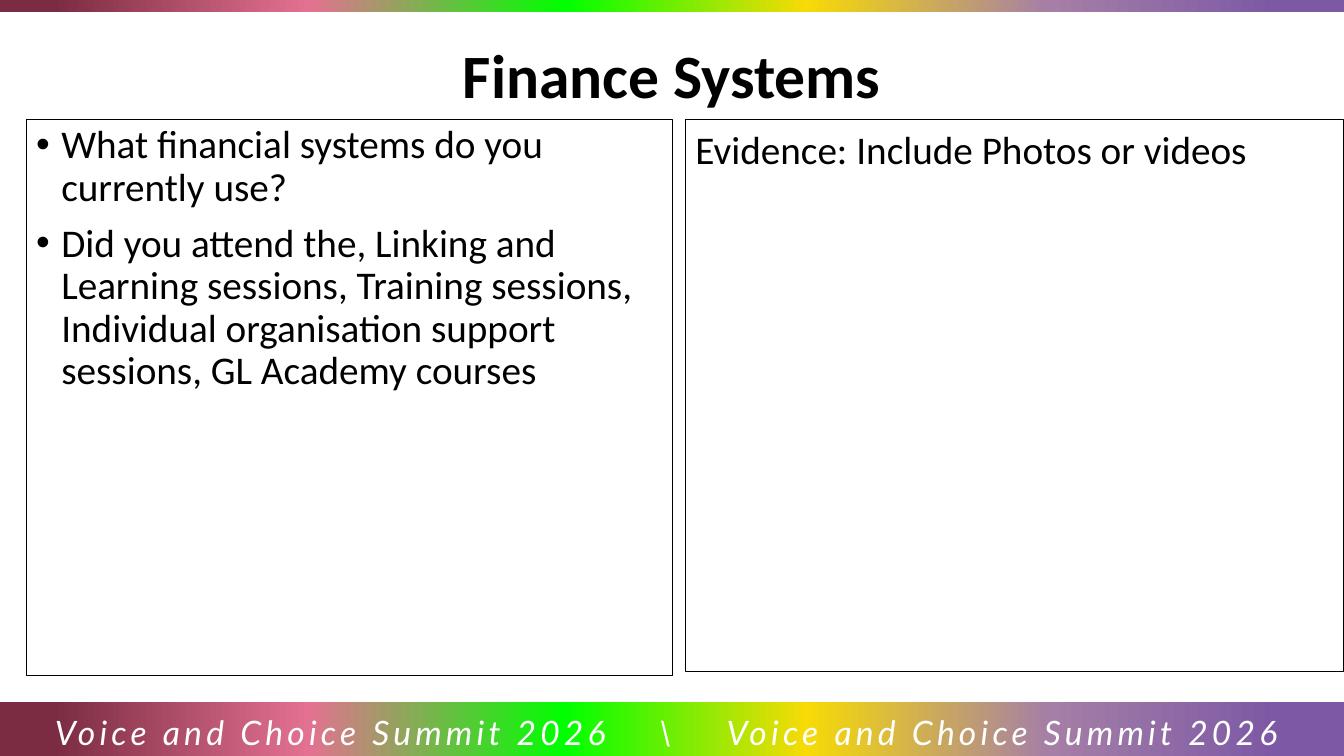
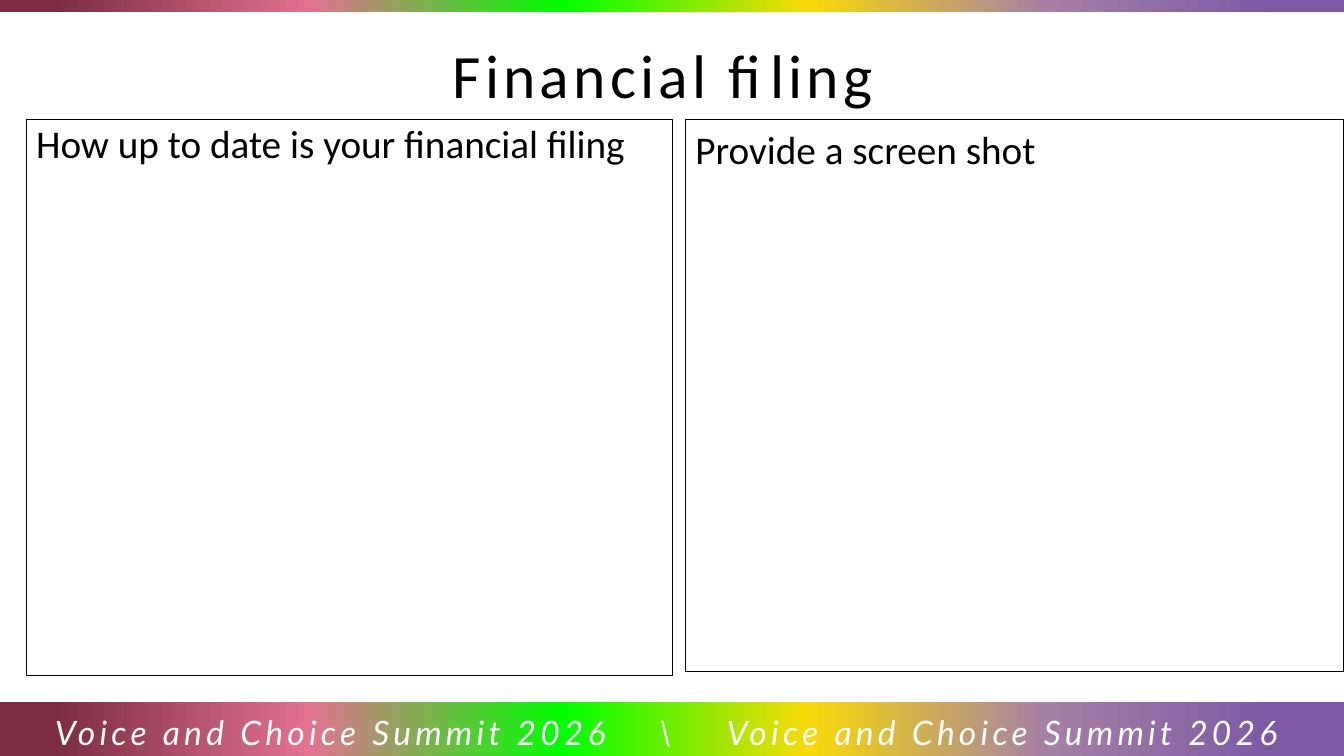
from dataclasses import dataclass

from lxml.etree import SubElement
from pptx import Presentation
from pptx.dml.color import RGBColor
from pptx.enum.shapes import MSO_SHAPE
from pptx.enum.text import MSO_ANCHOR, MSO_AUTO_SIZE, PP_ALIGN
from pptx.oxml.ns import qn
from pptx.util import Inches, Pt


@dataclass(frozen=True)
class Theme:
    """Colours, fonts, type sizes and page measures of the presentation."""

    ink: str = "000000"
    paper: str = "FFFFFF"
    rainbow: tuple = ((5, "7D59A5"), (22, "A57FA6"), (40, "F7DA06"),
                      (58, "00FF00"), (77, "E37191"), (96, "7B2C42"))
    text_font: str = "Calibri"
    footer_font: str = "Lato"
    title_size: int = 44
    body_size: int = 28
    footer_size: int = 24
    tracking: int = 3
    page_width: float = 13.33
    page_height: float = 7.5
    bullet_indent: float = 0.25


class Deck:
    """Draws the elements of the current slide in the shared style."""

    def __init__(self, theme):
        """Start an empty widescreen presentation."""
        self.theme = theme
        self.presentation = Presentation()
        self.presentation.slide_width = Inches(theme.page_width)
        self.presentation.slide_height = Inches(theme.page_height)
        self.slide = None

    def style(self, paragraph, font_name, size, color, bold=False, italic=False):
        """Set the font of a whole paragraph."""
        font = paragraph.font
        font.name, font.size = font_name, Pt(size)
        font.bold, font.italic = bold, italic
        font.color.rgb = RGBColor.from_string(color)

    def track(self, paragraph):
        """Spread the letters of a paragraph."""
        for run in paragraph.runs:
            run.font._element.set("spc", str(self.theme.tracking * 100))

    def band(self, top, height):
        """Draw a rainbow band across the page."""
        shape = self.slide.shapes.add_shape(
            MSO_SHAPE.RECTANGLE, 0, Inches(top),
            Inches(self.theme.page_width), Inches(height))
        shape.shadow.inherit = False
        shape.line.fill.background()
        shape.fill.gradient()
        shape.fill.gradient_angle = 180
        stops = shape.fill._xPr.find(qn("a:gradFill")).find(qn("a:gsLst"))
        for stop in list(stops):
            stops.remove(stop)
        for position, color in self.theme.rainbow:
            stop = SubElement(stops, qn("a:gs"), pos=str(position * 1000))
            SubElement(stop, qn("a:srgbClr"), val=color)

    def title(self, text, bold, tracked):
        """Fill and place the title."""
        theme = self.theme
        shape = self.slide.shapes.title
        shape.left, shape.top = 0, Inches(0.27)
        shape.width, shape.height = Inches(theme.page_width), Inches(0.92)
        frame = shape.text_frame
        frame.text = text
        frame.auto_size = MSO_AUTO_SIZE.NONE
        frame.vertical_anchor = MSO_ANCHOR.MIDDLE
        paragraph = frame.paragraphs[0]
        paragraph.alignment = PP_ALIGN.CENTER
        self.style(paragraph, theme.text_font, theme.title_size, theme.ink, bold)
        if tracked:
            self.track(paragraph)

    def footer(self, text):
        """Write the text twice over the lower band, parted by a backslash."""
        theme = self.theme
        box = self.slide.shapes.add_textbox(
            0, Inches(6.99), Inches(theme.page_width), Inches(0.49))
        frame = box.text_frame
        frame.word_wrap = True
        frame.margin_left = frame.margin_right = 0
        paragraph = frame.paragraphs[0]
        paragraph.text = f"\t{text}\t\\\t{text}"
        paragraph.alignment = PP_ALIGN.LEFT
        paragraph.line_spacing = 1.07
        tabs = SubElement(paragraph._p.get_or_add_pPr(), qn("a:tabLst"))
        for center in (3.3, 6.62, 9.94):
            SubElement(tabs, qn("a:tab"), pos=str(Inches(center)), algn="ctr")
        self.style(paragraph, theme.footer_font, theme.footer_size, theme.paper,
                   italic=True)
        self.track(paragraph)

    def panel(self, left, width, height, texts, line_spacing=1.0, bulleted=False):
        """Draw an outlined panel of paragraphs."""
        theme = self.theme
        box = self.slide.shapes.add_textbox(
            Inches(left), Inches(1.19), Inches(width), Inches(height))
        box.line.color.rgb = RGBColor.from_string(theme.ink)
        box.line.width = Pt(0.75)
        frame = box.text_frame
        frame.word_wrap = True
        for index, text in enumerate(texts):
            paragraph = frame.add_paragraph() if index else frame.paragraphs[0]
            paragraph.text = text
            paragraph.line_spacing = line_spacing
            if index:
                paragraph.space_before = Pt(10)
            if bulleted:
                properties = paragraph._p.get_or_add_pPr()
                indent = Inches(theme.bullet_indent)
                properties.set("marL", str(indent))
                properties.set("indent", str(-indent))
                SubElement(properties, qn("a:buFont"), typeface="Arial")
                SubElement(properties, qn("a:buChar"), char="•")
            self.style(paragraph, theme.text_font, theme.body_size, theme.ink)

    def add_slide(self, title, questions, evidence, bold=False, tracked=False,
                  bulleted=False):
        """Add a slide with questions on the left and evidence on the right."""
        layout = self.presentation.slide_layouts[5]
        self.slide = self.presentation.slides.add_slide(layout)
        self.band(0, 0.12)
        self.band(6.96, 0.54)
        self.title(title, bold, tracked)
        self.panel(6.8, 6.53, 5.47, [evidence])
        self.footer("Voice and Choice Summit 2026")
        self.panel(0.26, 6.41, 5.51, questions, 0.9, bulleted)


def main():
    """Build and save the presentation."""
    deck = Deck(Theme())
    deck.add_slide(
        "Finance Systems",
        ["What financial systems do you currently use?",
         "Did you attend the, Linking and Learning sessions, Training sessions, "
         "Individual organisation support sessions, GL Academy courses"],
        "Evidence: Include Photos or videos", bold=True, bulleted=True)
    deck.add_slide(
        "Financial filing ",
        ["How up to date is your financial filing"],
        "Provide a screen shot", tracked=True)
    deck.presentation.save("out.pptx")


if __name__ == "__main__":
    main()
